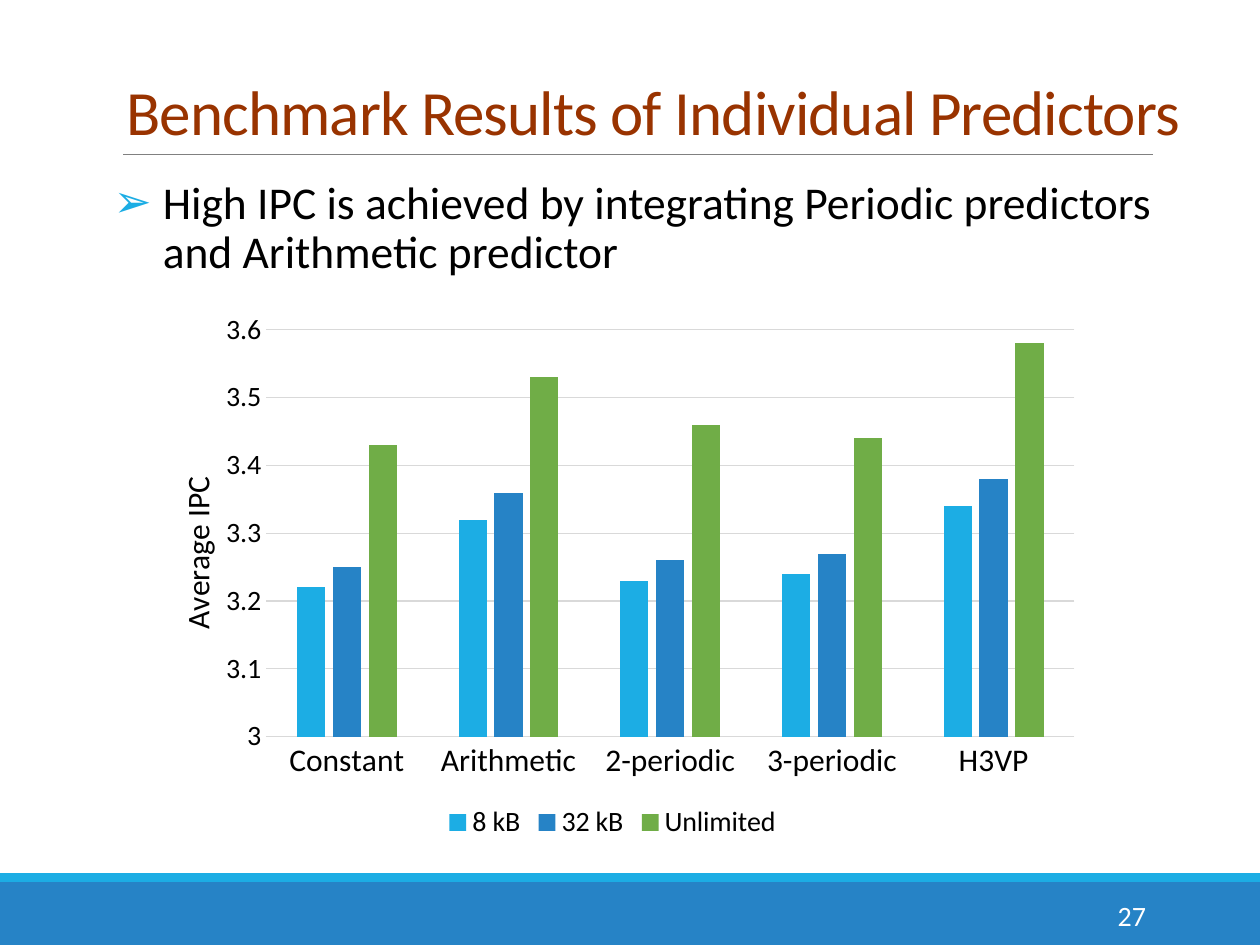
import pptx
import pptx.chart.data
import pptx.dml.color
import pptx.enum.chart
import pptx.enum.shapes
import pptx.enum.text
import pptx.oxml
import pptx.oxml.ns
import pptx.util
from lxml import etree

Pt = pptx.util.Pt
RGBColor = pptx.dml.color.RGBColor
Align = pptx.enum.text.PP_ALIGN
Anchor = pptx.enum.text.MSO_ANCHOR
qn = pptx.oxml.ns.qn

SKY = RGBColor(0x1C, 0xAD, 0xE4)
BLUE = RGBColor(0x26, 0x83, 0xC6)
GREEN = RGBColor(0x70, 0xAD, 0x47)
RUST = RGBColor(0x99, 0x33, 0x00)
GRAY = RGBColor(0x80, 0x80, 0x80)
PALE = RGBColor(0xD9, 0xD9, 0xD9)
BLACK = RGBColor(0, 0, 0)
WHITE = RGBColor(255, 255, 255)

CATEGORIES = ["Constant", "Arithmetic", "2-periodic", "3-periodic", "H3VP"]
SERIES = [
    ("8 kB", SKY, [3.22, 3.32, 3.23, 3.24, 3.34]),
    ("32 kB", BLUE, [3.25, 3.36, 3.26, 3.27, 3.38]),
    ("Unlimited", GREEN, [3.43, 3.53, 3.46, 3.44, 3.58]),
]


def assign(target, values):
    for name, value in values.items():
        setattr(target, name, value)


class SlideBuilder:
    font_name = "Calibri"

    def __init__(self, deck):
        self.page = deck.slides.add_slide(deck.slide_layouts[1])

    def style_font(self, font, size, color=BLACK):
        assign(font, {"name": self.font_name, "size": Pt(size), "bold": False})
        font.color.rgb = color

    def place(self, box, left, top, width, height):
        assign(box, {"left": Pt(left), "top": Pt(top),
                     "width": Pt(width), "height": Pt(height)})

    def fill_text(self, box, text, size, color, frame_format, para_format):
        frame = box.text_frame
        assign(frame, {"word_wrap": True,
                       "auto_size": pptx.enum.text.MSO_AUTO_SIZE.NONE,
                       **frame_format})
        para = frame.paragraphs[0]
        assign(para, para_format)
        span = para.add_run()
        span.text = text
        self.style_font(span.font, size, color)
        return para

    def band(self, left, top, width, height, color):
        box = self.page.shapes.add_shape(
            pptx.enum.shapes.MSO_SHAPE.RECTANGLE,
            Pt(left), Pt(top), Pt(width), Pt(height))
        box.shadow.inherit = False
        box.fill.solid()
        box.fill.fore_color.rgb = color
        box.line.fill.background()

    def rule(self, left, top, right, color, width):
        line = self.page.shapes.add_connector(
            pptx.enum.shapes.MSO_CONNECTOR.STRAIGHT,
            Pt(left), Pt(top), Pt(right), Pt(top))
        line.line.color.rgb = color
        line.line.width = Pt(width)
        etree.SubElement(line._element.spPr, qn("a:effectLst"))

    def title(self, text, *area):
        box = self.page.shapes.title
        self.place(box, *area)
        para = self.fill_text(box, text, 36, RUST,
                              {"vertical_anchor": Anchor.BOTTOM},
                              {"alignment": Align.LEFT, "line_spacing": 0.85})
        para.runs[0]._r.get_or_add_rPr().set("spc", "-50")

    def bullet(self, text, *area):
        box = self.page.placeholders[1]
        self.place(box, *area)
        para = self.fill_text(box, text, 26, BLACK,
                              {"margin_left": 0, "margin_right": 0},
                              {"line_spacing": 0.9, "space_before": Pt(12),
                               "space_after": Pt(2)})
        properties = para._p.get_or_add_pPr()
        properties.set("marL", str(Pt(28)))
        properties.set("indent", str(-Pt(28)))
        tint = etree.SubElement(properties, qn("a:buClr"))
        etree.SubElement(tint, qn("a:srgbClr")).set("val", str(SKY))
        etree.SubElement(properties, qn("a:buFont")).set("typeface", self.font_name)
        etree.SubElement(properties, qn("a:buChar")).set("char", "➢")

    def label(self, text, left, top, width, height):
        box = self.page.shapes.add_textbox(Pt(left), Pt(top), Pt(width), Pt(height))
        self.fill_text(box, text, 16, WHITE, {"vertical_anchor": Anchor.MIDDLE},
                       {"alignment": Align.RIGHT})

    def fix_layout(self, parent, **fractions):
        """Pin a chart part to fractions of the chart area."""
        for old in parent.findall(qn("c:layout")):
            parent.remove(old)
        layout = etree.Element(qn("c:layout"))
        manual = etree.SubElement(layout, qn("c:manualLayout"))
        if "w" in fractions:
            etree.SubElement(manual, qn("c:layoutTarget")).set("val", "inner")
        for mode in ("xMode", "yMode"):
            etree.SubElement(manual, qn("c:" + mode)).set("val", "edge")
        for name, value in fractions.items():
            etree.SubElement(manual, qn("c:" + name)).set("val", str(value))
        text = parent.find(qn("c:tx"))
        parent.insert(0 if text is None else 1, layout)

    def column_chart(self, left, top, width, height):
        data = pptx.chart.data.CategoryChartData(number_format="General")
        data.categories = CATEGORIES
        for name, _, values in SERIES:
            data.add_series(name, values)
        chart = self.page.shapes.add_chart(
            pptx.enum.chart.XL_CHART_TYPE.COLUMN_CLUSTERED,
            Pt(left), Pt(top), Pt(width), Pt(height), data).chart
        self.style_font(chart.font, 16)
        chart.has_title = False

        # Columns
        plot = chart.plots[0]
        assign(plot, {"gap_width": 219, "overlap": -27, "vary_by_categories": False})
        for series, (_, color, _) in zip(plot.series, SERIES):
            series.format.fill.solid()
            series.format.fill.fore_color.rgb = color

        # Axes
        no_tick = pptx.enum.chart.XL_TICK_MARK.NONE
        for axis, size in ((chart.category_axis, 18), (chart.value_axis, 16)):
            assign(axis, {"major_tick_mark": no_tick, "minor_tick_mark": no_tick})
            self.style_font(axis.tick_labels.font, size)
        values = chart.value_axis
        assign(values, {"minimum_scale": 3, "maximum_scale": 3.6, "major_unit": 0.1,
                        "has_major_gridlines": True})
        values.format.line.fill.background()
        for line in (chart.category_axis.format.line,
                     values.major_gridlines.format.line):
            line.color.rgb = PALE
            line.width = Pt(0.75)
        frame = values.axis_title.text_frame
        frame.text = "Average IPC"
        self.style_font(frame.paragraphs[0].runs[0].font, 18)
        self.fix_layout(values.axis_title._element, x=0.04, y=0.31)
        self.fix_layout(chart._chartSpace.chart.plotArea,
                        x=0.14, y=0.05, w=0.84, h=0.75)

        # Legend
        chart.has_legend = True
        assign(chart.legend, {"position": pptx.enum.chart.XL_LEGEND_POSITION.BOTTOM,
                              "include_in_layout": False})
        self.style_font(chart.legend.font, 16)


def main():
    deck = pptx.Presentation()
    assign(deck, {"slide_width": Pt(720), "slide_height": Pt(540)})
    slide = SlideBuilder(deck)

    # Footer bands and title rule
    slide.band(0, 504, 720, 36, BLUE)
    slide.band(0, 499, 720, 5, SKY)
    slide.rule(70.5, 88.5, 659, GRAY, 0.5)

    # Heading and message
    slide.title("Benchmark Results of Individual Predictors", 65, 19, 646.5, 69.5)
    slide.bullet("High IPC is achieved by integrating Periodic predictors "
                 "and Arithmetic predictor", 65, 99.5, 594, 387)

    # Page number and results
    slide.label("27", 584.5, 508.5, 77.5, 28.5)
    slide.column_chart(75, 173, 550, 310)

    deck.save("out.pptx")


if __name__ == "__main__":
    main()
